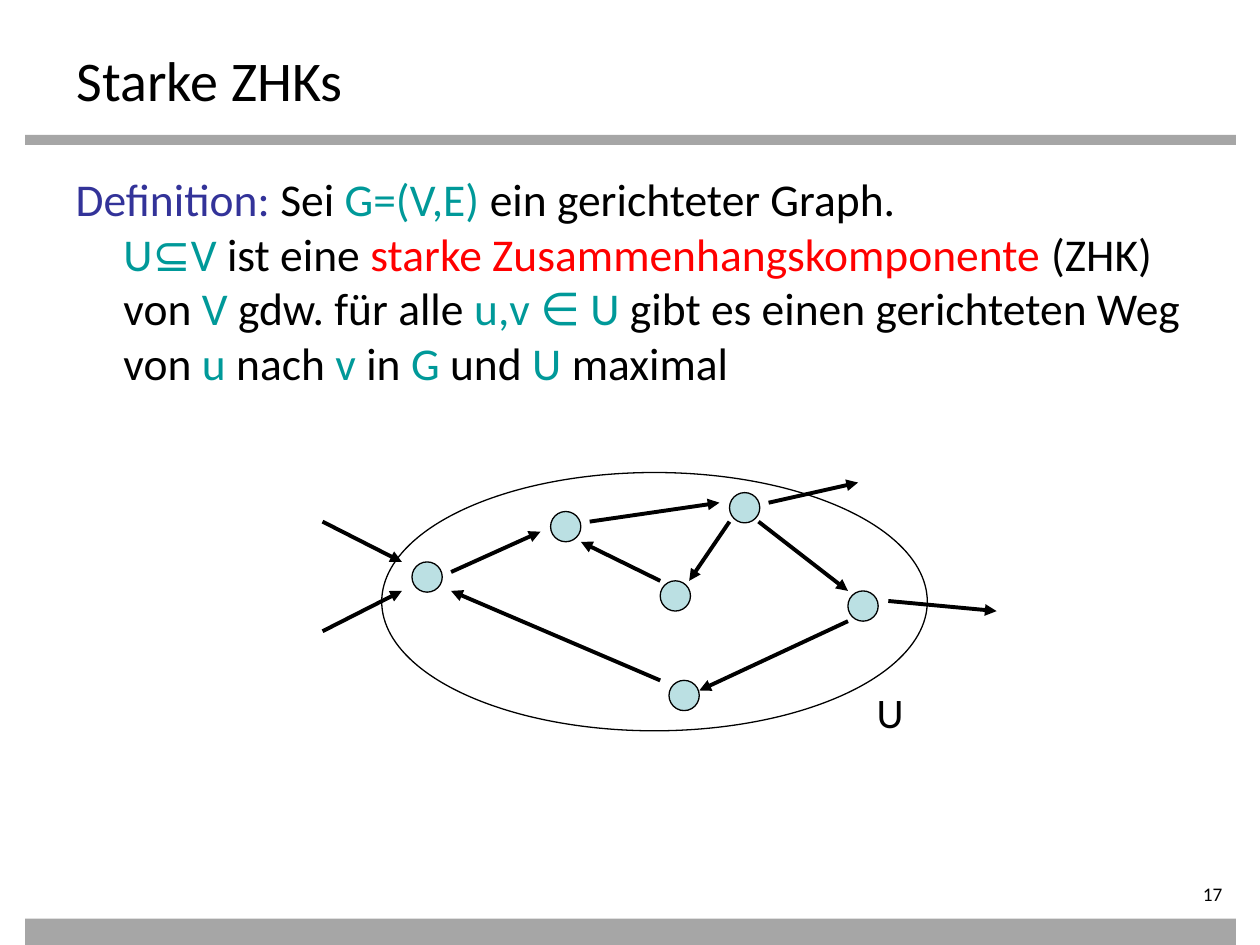
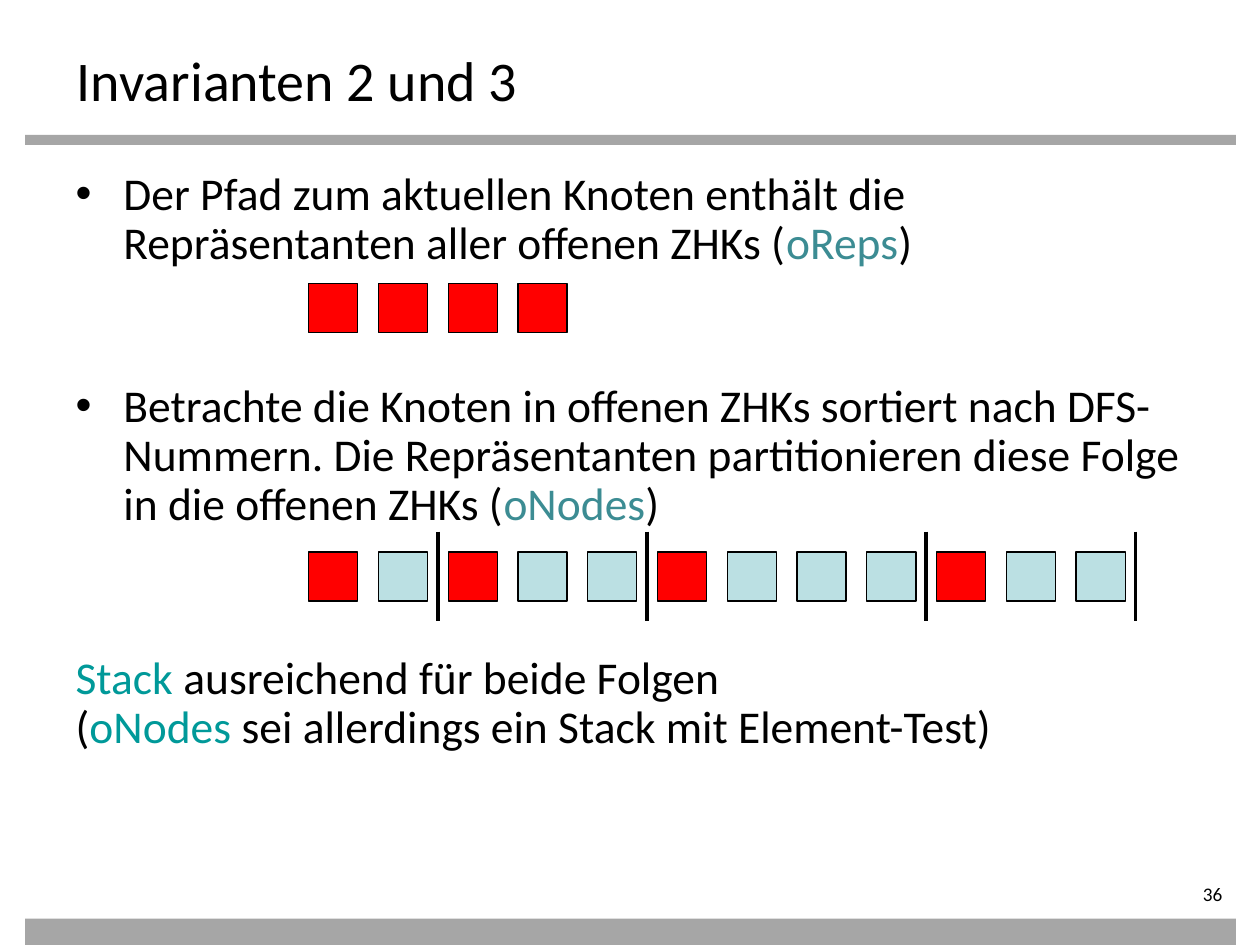
from dataclasses import dataclass

from lxml import etree
from pptx import Presentation
from pptx import util as u
from pptx.dml.color import RGBColor
from pptx.enum import shapes as sh, text as tx
from pptx.oxml import ns


@dataclass(frozen=True)
class Theme:
    font: str = "Calibri"
    symbol_font: str = "Roboto"
    title_size: int = 32
    body_size: int = 26
    label_size: int = 24
    number_size: int = 11
    thin: float = 0.75
    thick: float = 2.25
    black: str = "000000"
    band: str = "A6A6A6"
    term: str = "333399"
    formula: str = "009999"
    stack: str = "3C8C93"
    red: str = "FF0000"
    node: str = "BBE0E3"


T = Theme()
BANDS = [(0.2, 1.07, 9.61, 0.08), (0.2, 7.29, 9.61, 0.21)]
TITLE_BOX = (0.51, 0.28, 9, 0.55)
BODY_BOX = (0.5, 1.31, 9, 5.43)
NUMBER_BOX = (8.7, 7, 1.1, 0.22)
HANGING = 0.38
BREAK = ("\n", T.black)

COMPONENT = dict(
    title="Starke ZHKs", number="17", line_spacing=1.0,
    paragraphs=[dict(indent=HANGING, bullet=None, before=0, runs=[
        ("Definition:", T.term), (" Sei ", T.black), ("G=(V,E)", T.formula),
        (" ein gerichteter Graph. ", T.black), BREAK,
        ("U", T.formula), ("⊆", T.formula), ("V", T.formula),
        (" ist eine ", T.black), ("starke Zusammenhangskomponente", T.red),
        (" (ZHK) von ", T.black), ("V ", T.formula),
        ("gdw. für alle ", T.black), ("u,v ", T.formula),
        ("∈", T.formula), (" U", T.formula),
        (" gibt es einen gerichteten Weg von ", T.black), ("u", T.formula),
        (" nach ", T.black), ("v", T.formula), (" in ", T.black),
        ("G ", T.formula), ("und", T.black), (" U ", T.formula),
        ("maximal", T.black)])])

INVARIANTS = dict(
    title="Invarianten 2 und 3", number="36", line_spacing=0.9,
    paragraphs=[
        dict(indent=HANGING, bullet="•", before=0, runs=[
            ("Der Pfad zum aktuellen Knoten enthält die Repräsentanten "
             "aller offenen ZHKs (", T.black),
            ("oReps", T.stack), (")", T.black)]),
        dict(indent=HANGING, bullet="•", before=65, runs=[
            ("Betrachte die Knoten in offenen ZHKs sortiert nach DFS-Nummern. "
             "Die Repräsentanten partitionieren diese Folge in die offenen "
             "ZHKs (", T.black),
            ("oNodes", T.stack), (")", T.black)]),
        dict(indent=0, bullet=None, before=71, runs=[
            ("Stack", T.formula), (" ausreichend für beide Folgen", T.black),
            BREAK, ("(", T.black), ("oNodes ", T.formula),
            ("sei allerdings ein Stack mit Element-Test)", T.black)])])

NODE_SIZE = 0.24
NODES = [(5.31, 5.4), (3.27, 4.46), (4.37, 4.06),
         (5.79, 3.91), (6.73, 4.69), (5.24, 4.61)]
EDGES = [
    ((5.24, 5.4), (3.58, 4.69)), ((6.73, 4.93), (5.55, 5.48)),
    ((3.58, 4.54), (4.29, 4.22)), ((4.68, 4.14), (5.71, 3.99)),
    ((6.02, 4.14), (6.73, 4.69)), ((2.56, 4.14), (3.19, 4.46)),
    ((6.1, 3.99), (6.81, 3.83)), ((2.56, 5.01), (3.19, 4.69)),
    ((5.24, 4.61), (4.61, 4.3)), ((5.79, 4.14), (5.47, 4.61)),
    ((7.05, 4.77), (7.91, 4.85))]
COMPONENT_OUTLINE = (3.03, 3.75, 4.33, 2.05)
COMPONENT_LABEL = ("U", (6.86, 5.4, 0.44, 0.5))

OPEN_COMPONENT_SIZES = [2, 3, 4, 3]
SQUARE = 0.39
FIRST_SQUARE, LAST_SQUARE = 2.45, 8.54
REPS_TOP, NODES_TOP = 2.25, 4.38
DIVIDER_TOP, DIVIDER_BOTTOM = 4.22, 4.93


def inches(values):
    return [u.Inches(value) for value in values]


def rgb(colour):
    return RGBColor.from_string(colour)


def add_figure(slide, kind, box, fill=None, outlined=True):
    figure = slide.shapes.add_shape(kind, *inches(box))
    figure.shadow.inherit = False
    if fill:
        figure.fill.solid()
        figure.fill.fore_color.rgb = rgb(fill)
    else:
        figure.fill.background()
    if outlined:
        figure.line.color.rgb = rgb(T.black)
        figure.line.width = u.Pt(T.thin)
    else:
        figure.line.fill.background()
    return figure


def add_line(slide, start, end, arrow=False):
    line = slide.shapes.add_connector(sh.MSO_CONNECTOR.STRAIGHT,
                                      *inches(start + end))
    line.line.color.rgb = rgb(T.black)
    line.line.width = u.Pt(T.thick)
    if arrow:
        etree.SubElement(line.line._get_or_add_ln(), ns.qn("a:tailEnd"),
                         type="triangle")
    etree.SubElement(line.element.spPr, ns.qn("a:effectLst"))


def place(placeholder, box):
    placeholder.left, placeholder.top, placeholder.width, placeholder.height = inches(box)
    placeholder.text_frame.auto_size = tx.MSO_AUTO_SIZE.NONE
    placeholder.text_frame.vertical_anchor = tx.MSO_ANCHOR.TOP
    return placeholder.text_frame


def style(paragraph, size, align=tx.PP_ALIGN.LEFT):
    paragraph.alignment = align
    paragraph.font.name = T.font
    paragraph.font.size = u.Pt(size)
    paragraph.font.color.rgb = rgb(T.black)


def add_label(slide, words, box, size):
    frame = slide.shapes.add_textbox(*inches(box)).text_frame
    frame.paragraphs[0].text = words
    style(frame.paragraphs[0], size)
    return frame


def set_bullet(paragraph, indent, bullet):
    properties = paragraph._p.get_or_add_pPr()
    properties.set("marL", str(u.Inches(indent)))
    properties.set("indent", str(u.Inches(-indent)))
    if bullet:
        etree.SubElement(properties, ns.qn("a:buChar"), char=bullet)
    else:
        etree.SubElement(properties, ns.qn("a:buNone"))


def write_body(frame, paragraphs, line_spacing):
    for index, content in enumerate(paragraphs):
        paragraph = frame.add_paragraph() if index else frame.paragraphs[0]
        set_bullet(paragraph, content["indent"], content["bullet"])
        paragraph.line_spacing = line_spacing
        paragraph.space_before = u.Pt(content["before"])
        style(paragraph, T.body_size)
        for words, colour in content["runs"]:
            if words == "\n":
                paragraph.add_line_break()
                continue
            run = paragraph.add_run()
            run.text = words
            run.font.color.rgb = rgb(colour)
            if words in "⊆∈":
                run.font.name = T.symbol_font


def add_bands(slide, layout):
    for box in BANDS:
        band = add_figure(slide, sh.MSO_SHAPE.RECTANGLE, box, T.band, outlined=False)
        layout.shapes.element.append(band.element)


def fill_slide(slide, content):
    title = place(slide.shapes.title, TITLE_BOX)
    title.margin_top = u.Inches(0.08)
    title.paragraphs[0].text = content["title"]
    style(title.paragraphs[0], T.title_size)
    body = place(slide.placeholders[1], BODY_BOX)
    write_body(body, content["paragraphs"], content["line_spacing"])
    number = add_label(slide, content["number"], NUMBER_BOX, T.number_size)
    number.word_wrap = True
    number.margin_left = number.margin_top = number.margin_bottom = 0
    number.paragraphs[0].alignment = tx.PP_ALIGN.RIGHT


def draw_component(slide):
    add_figure(slide, sh.MSO_SHAPE.OVAL, COMPONENT_OUTLINE)
    for node in NODES:
        add_figure(slide, sh.MSO_SHAPE.OVAL, node + (NODE_SIZE, NODE_SIZE), T.node)
    for start, end in EDGES:
        add_line(slide, start, end, arrow=True)
    words, box = COMPONENT_LABEL
    add_label(slide, words, box, T.label_size).word_wrap = False


def draw_sequences(slide):
    pitch = (LAST_SQUARE - FIRST_SQUARE) / (sum(OPEN_COMPONENT_SIZES) - 1)

    def add_square(index, top, colour):
        box = (FIRST_SQUARE + index * pitch, top, SQUARE, SQUARE)
        add_figure(slide, sh.MSO_SHAPE.RECTANGLE, box, colour)

    position = 0
    for rep, size in enumerate(OPEN_COMPONENT_SIZES):
        add_square(rep, REPS_TOP, T.red)
        for member in range(size):
            add_square(position + member, NODES_TOP, T.node if member else T.red)
        position += size
        divider = FIRST_SQUARE + position * pitch - (pitch - SQUARE) / 2
        add_line(slide, (divider, DIVIDER_TOP), (divider, DIVIDER_BOTTOM))


def main():
    deck = Presentation()
    deck.slide_width, deck.slide_height = inches((10, 7.5))
    layout = deck.slide_layouts[1]
    for content, draw in ((COMPONENT, draw_component), (INVARIANTS, draw_sequences)):
        slide = deck.slides.add_slide(layout)
        if content is COMPONENT:
            add_bands(slide, layout)
        fill_slide(slide, content)
        draw(slide)
    deck.save("out.pptx")


if __name__ == "__main__":
    main()
